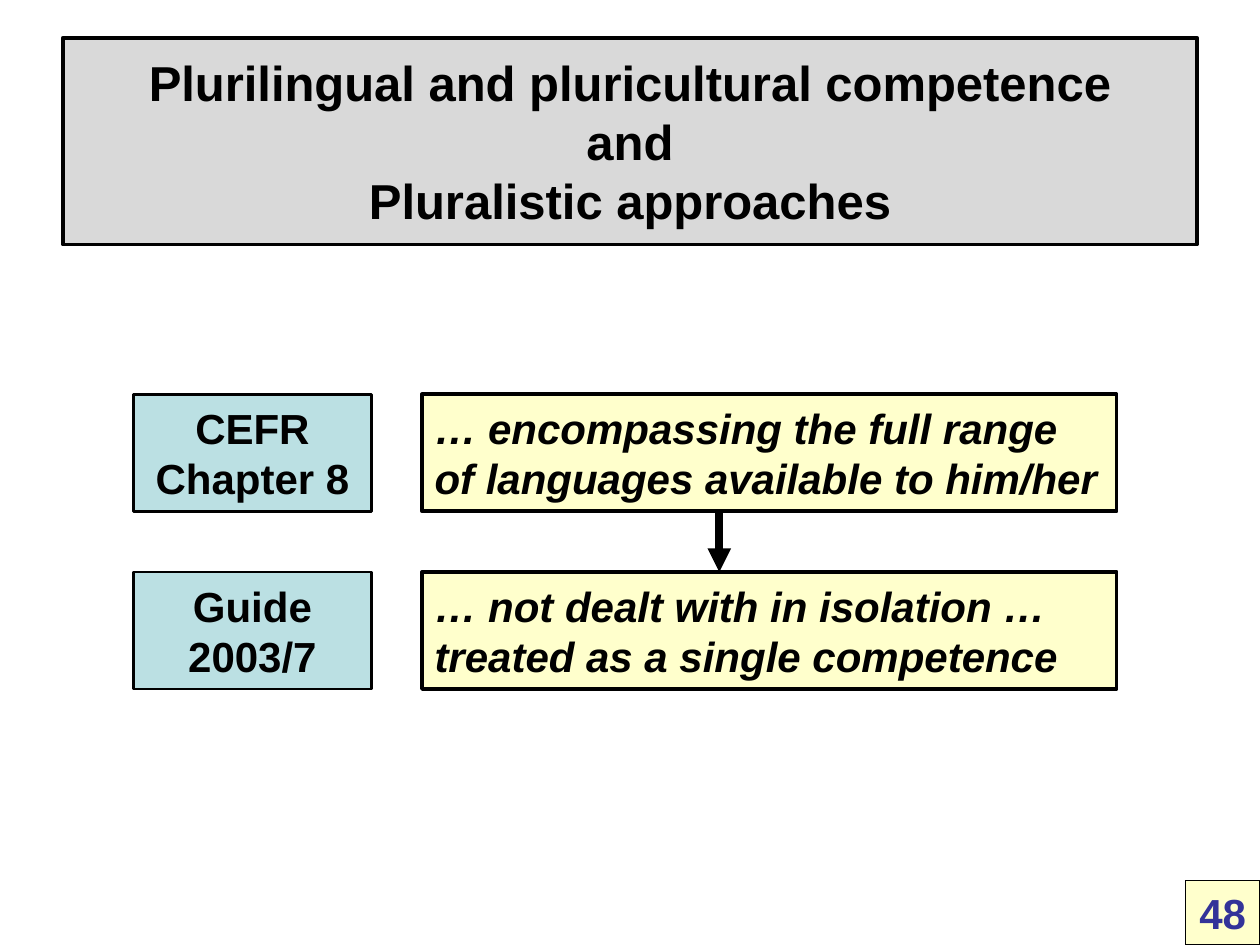
from pptx import Presentation
from pptx.dml.color import RGBColor
from pptx.enum.shapes import MSO_CONNECTOR, MSO_SHAPE
from pptx.enum.text import MSO_ANCHOR, MSO_AUTO_SIZE, PP_ALIGN
from pptx.oxml.ns import qn
from pptx.util import Cm, Pt
from lxml.etree import SubElement

BLACK = RGBColor(0x00, 0x00, 0x00)
GREY = RGBColor(0xD9, 0xD9, 0xD9)
TEAL = RGBColor(0xBB, 0xE0, 0xE3)
CREAM = RGBColor(0xFF, 0xFF, 0xCC)
INDIGO = RGBColor(0x33, 0x33, 0x99)


def format_box(sp, text, fill, line=1.5, size=24, color=BLACK, italic=False, align=PP_ALIGN.CENTER):
    sp.fill.solid()
    sp.fill.fore_color.rgb = fill
    sp.line.color.rgb = BLACK
    sp.line.width = Pt(line)
    tf = sp.text_frame
    tf.word_wrap = True
    tf.auto_size = MSO_AUTO_SIZE.NONE
    tf.vertical_anchor = MSO_ANCHOR.MIDDLE
    p = tf.paragraphs[0]
    p.text = text
    p.alignment = align
    for r in p.runs:
        r.font.name = "Arial"
        r.font.size = Pt(size)
        r.font.bold = True
        r.font.italic = italic
        r.font.color.rgb = color


prs = Presentation()
prs.slide_width, prs.slide_height = Cm(25.4), Cm(19.05)
slide = prs.slides.add_slide(prs.slide_layouts[5])
shapes = slide.shapes

title = shapes.title
title.left, title.top, title.width, title.height = Cm(1.27), Cm(0.76), Cm(22.86), Cm(4.17)
format_box(title, "Plurilingual and pluricultural competence\vand\vPluralistic approaches",
           GREY, line=2.25, size=28)

rows = [
    ("CEFR\vChapter 8", "… encompassing the full range of languages available to him/her"),
    ("Guide\v2003/7", "… not dealt with in isolation … treated as a single competence"),
]
top, step, height = 7.95, 3.58, 2.36
for i, (source, quote) in enumerate(rows):
    y = Cm(top + i * step)
    sp = shapes.add_shape(MSO_SHAPE.RECTANGLE, Cm(2.69), y, Cm(4.8), Cm(height))
    sp.shadow.inherit = False
    format_box(sp, source, TEAL)
    sp = shapes.add_shape(MSO_SHAPE.RECTANGLE, Cm(8.51), y, Cm(14), Cm(height))
    sp.shadow.inherit = False
    format_box(sp, quote, CREAM, line=2.25, italic=True, align=PP_ALIGN.LEFT)

arrow = shapes.add_connector(MSO_CONNECTOR.STRAIGHT, Cm(14.5), Cm(top + height), Cm(14.5), Cm(top + step))
arrow.line.color.rgb = BLACK
arrow.line.width = Pt(4.5)
SubElement(arrow.line._get_or_add_ln(), qn("a:tailEnd"), type="triangle")
SubElement(arrow._element.spPr, qn("a:effectLst"))

sp = shapes.add_shape(MSO_SHAPE.RECTANGLE, Cm(23.9), Cm(17.75), Cm(1.5), Cm(1.3))
sp.shadow.inherit = False
format_box(sp, "48", CREAM, line=1, color=INDIGO)

prs.save("out.pptx")
